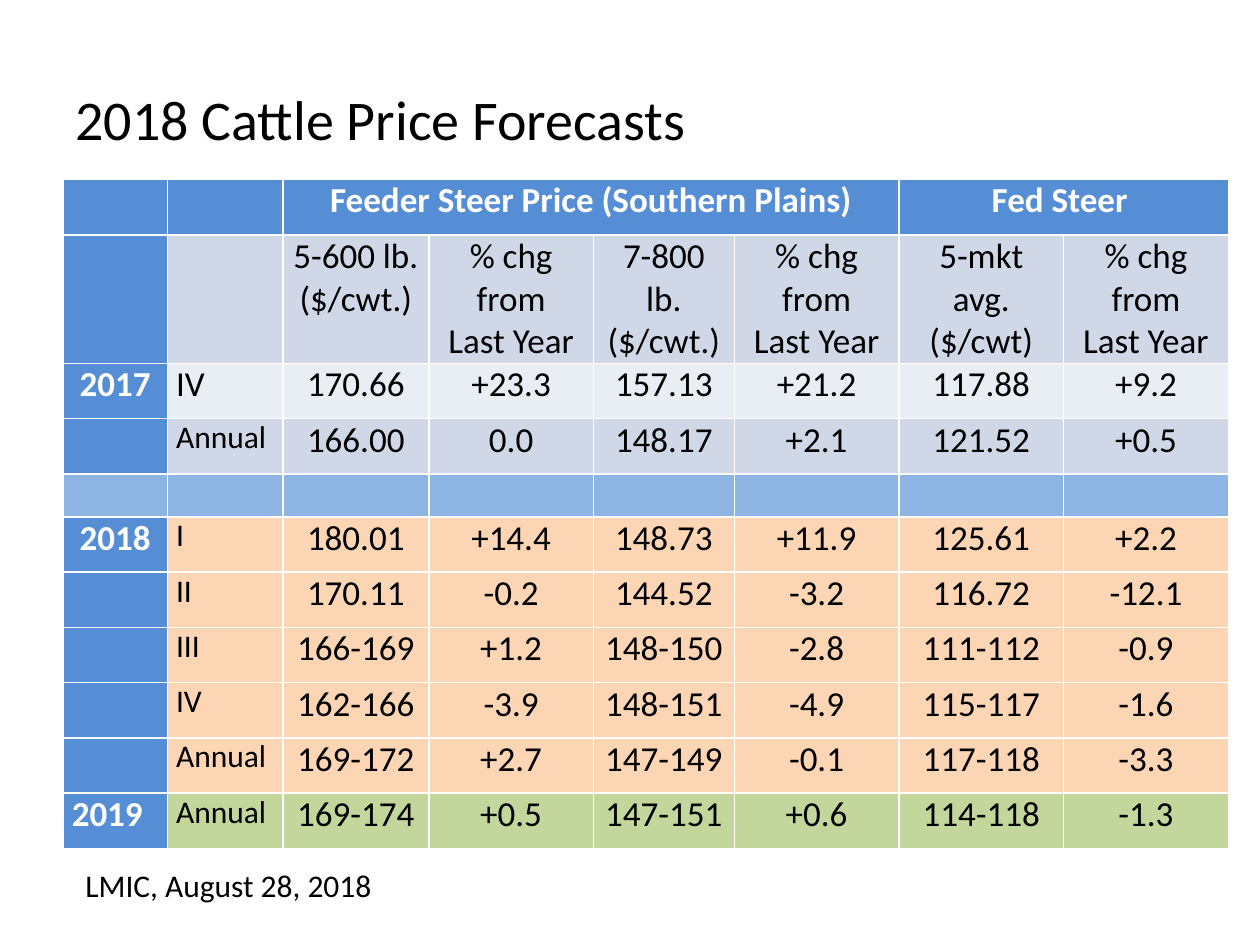
from pptx import Presentation
from pptx.dml.color import RGBColor
from pptx.enum.text import MSO_ANCHOR as Anchor, PP_ALIGN as Align
from pptx.util import Inches, Pt

WIDTH, HEIGHT = Inches(10), Inches(7.5)
FONT = "Calibri"
BLACK = RGBColor(0x00, 0x00, 0x00)
WHITE = RGBColor(0xFF, 0xFF, 0xFF)
BLUE = RGBColor(0x55, 0x8E, 0xD5)
SKY = RGBColor(0x8E, 0xB4, 0xE3)
MIST = RGBColor(0xD0, 0xD8, 0xE8)
PALE = RGBColor(0xE9, 0xED, 0xF4)
PEACH = RGBColor(0xFC, 0xD5, 0xB5)
GREEN = RGBColor(0xC3, 0xD6, 0x9B)

COLUMN_SHARES = [0.83, 0.92, 1.16, 1.31, 1.12, 1.31, 1.31, 1.31]
CHANGE = "% chg from\nLast Year"
ROWS = [
    (BLUE, 0.44, ["", "", "Feeder Steer Price (Southern Plains)", "", "", "", "Fed Steer ", ""]),
    (MIST, 1, ["", "", "5-600 lb.\n($/cwt.)", CHANGE, "7-800 lb.\n($/cwt.)", CHANGE,
               "5-mkt avg.\n($/cwt)", CHANGE]),
    (PALE, 0.44, [" 2017", "IV", "170.66", "+23.3", "157.13", "+21.2", "117.88", "+9.2"]),
    (MIST, 0.44, ["", "Annual", "166.00", "0.0", "148.17", "+2.1", "121.52", "+0.5"]),
    (SKY, 0.34, [""] * 8),
    (PEACH, 0.44, [" 2018", "I", "180.01", "+14.4", "148.73", "+11.9", "125.61", "+2.2"]),
    (PEACH, 0.44, ["", "II", "170.11", "-0.2", "144.52", "-3.2", "116.72", "-12.1"]),
    (PEACH, 0.44, ["", "III", "166-169", "+1.2", "148-150", "-2.8", "111-112", "-0.9"]),
    (PEACH, 0.44, ["", "IV", "162-166", "-3.9", "148-151", "-4.9", "115-117", "-1.6"]),
    (PEACH, 0.44, ["", "Annual", "169-172", "+2.7", "147-149", "-0.1", "117-118", "-3.3"]),
    (GREEN, 0.44, ["2019", "Annual", "169-174", "+0.5", "147-151", "+0.6", "114-118", "-1.3"]),
]


def slide_box(left, top, width, height):
    return (round(WIDTH * left), round(HEIGHT * top),
            round(WIDTH * width), round(HEIGHT * height))


def write(frame, text, size, color=BLACK, bold=False, align=Align.LEFT):
    frame.text = text
    for paragraph in frame.paragraphs:
        paragraph.alignment = align
        font = paragraph.font
        font.name, font.size, font.bold = FONT, Pt(size), bold
        font.color.rgb = color


def add_title(slide, box):
    title = slide.shapes.title
    title.left, title.top, title.width, title.height = box
    title.text_frame.vertical_anchor = Anchor.MIDDLE
    write(title.text_frame, "2018 Cattle Price Forecasts", 32)


def fill_cell(cell, text, row, column, row_fill):
    is_header = row == 0
    is_year = column == 0 and row_fill != SKY
    is_small = column == 1 and row > 2 and row_fill != SKY
    cell.margin_left = cell.margin_right = Inches(0.07)
    cell.margin_top = cell.margin_bottom = 0
    cell.fill.solid()
    cell.fill.fore_color.rgb = BLUE if is_year else row_fill
    write(cell.text_frame, text, 18 if is_small else 20,
          WHITE if is_header or is_year else BLACK, is_header or is_year,
          Align.LEFT if column < 2 else Align.CENTER)


def add_price_table(slide, box):
    left, top, width, height = box
    table = slide.shapes.add_table(len(ROWS), len(COLUMN_SHARES), *box).table
    table.horz_banding = False
    for column, share in zip(table.columns, COLUMN_SHARES):
        column.width = round(width * share / sum(COLUMN_SHARES))
    total = sum(share for _, share, _ in ROWS)
    for row, (row_fill, share, texts) in enumerate(ROWS):
        table.rows[row].height = round(height * share / total)
        for column, text in enumerate(texts):
            fill_cell(table.cell(row, column), text, row, column, row_fill)
    for first, last in ((2, 5), (6, 7)):
        table.cell(0, first).merge(table.cell(0, last))


def add_source(slide, box):
    frame = slide.shapes.add_textbox(*box).text_frame
    frame.word_wrap = True
    write(frame, "LMIC, August 28, 2018", 18)


def main():
    presentation = Presentation()
    presentation.slide_width, presentation.slide_height = WIDTH, HEIGHT
    slide = presentation.slides.add_slide(presentation.slide_layouts[5])
    add_title(slide, slide_box(0.05, 0.04, 0.9, 0.17))
    add_price_table(slide, slide_box(0.05, 0.19, 0.925, 0.705))
    add_source(slide, slide_box(0.058, 0.91, 0.31, 0.053))
    presentation.save("out.pptx")


if __name__ == "__main__":
    main()
